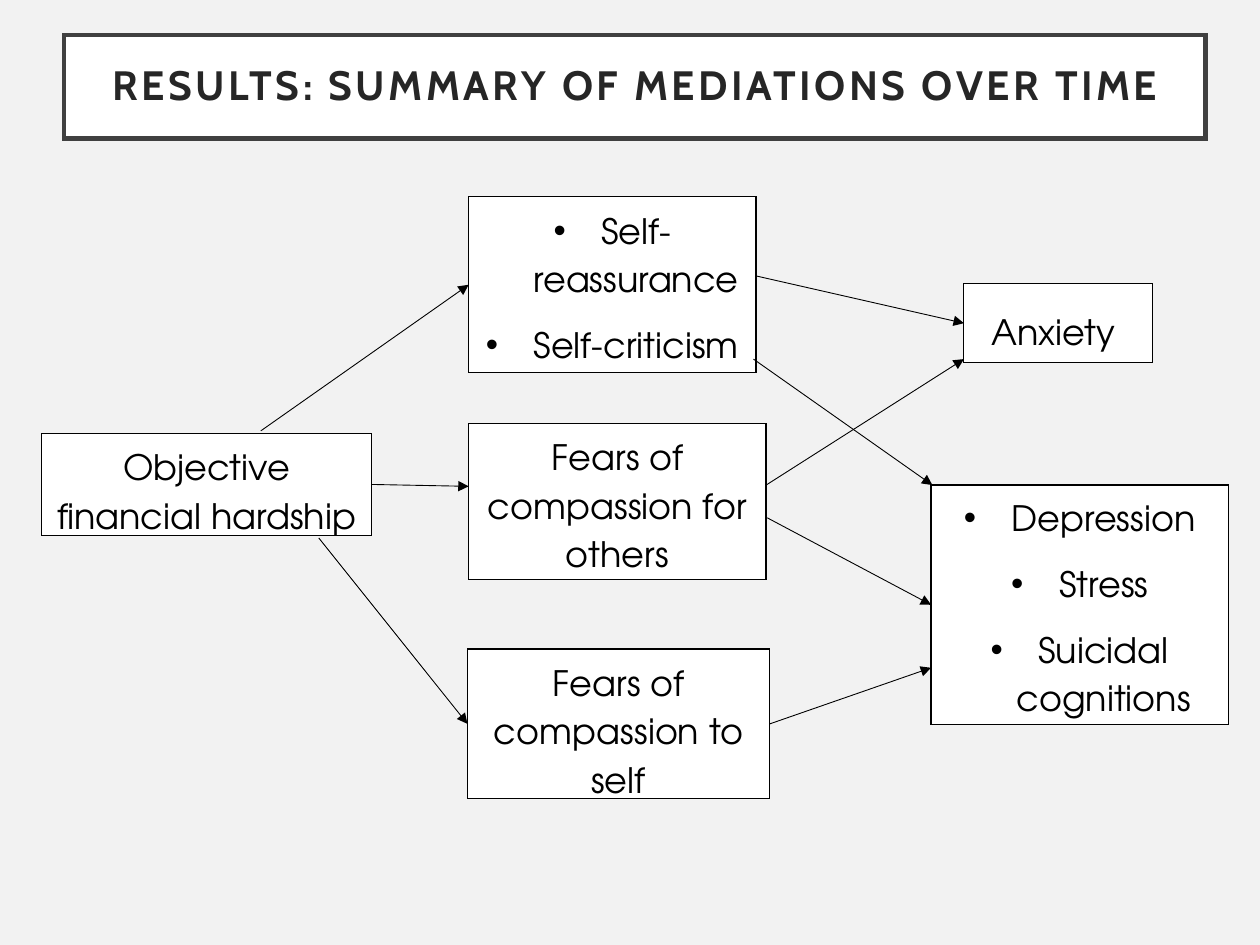
"""Build a slide that summarises the mediation paths over time."""
from dataclasses import dataclass
from typing import Optional

from lxml import etree
from pptx import Presentation
from pptx import util as u
from pptx.dml.color import RGBColor
from pptx.enum import shapes, text
from pptx.oxml import ns

BACKGROUND = RGBColor(0xF2, 0xF2, 0xF2)
WHITE = RGBColor(0xFF, 0xFF, 0xFF)
BLACK = RGBColor(0, 0, 0)
TITLE_BORDER = RGBColor(0x40, 0x40, 0x40)
TITLE_TEXT = RGBColor(0x26, 0x26, 0x26)
LEFT_SIDE, RIGHT_SIDE = 1, 3


@dataclass
class Box:
    name: str
    left: float
    top: float
    width: float
    height: float
    lines: tuple
    bulleted: bool = False
    anchor: text.MSO_ANCHOR = text.MSO_ANCHOR.TOP
    line_spacing: float = 1.15
    space_before: float = 10
    margin_right: float = 0.1
    font: str = "TeX Gyre Adventor"
    size: float = 20
    bold: bool = False
    color: RGBColor = BLACK
    border: RGBColor = BLACK
    border_width: float = 0.75


@dataclass
class Arrow:
    start: tuple
    end: tuple
    source: Optional[str] = None
    target: Optional[str] = None


TITLE = Box("title", 0.51, 0.28, 9.06, 0.82, ("RESULTS: SUMMARY OF MEDIATIONS OVER TIME",),
            anchor=text.MSO_ANCHOR.MIDDLE, line_spacing=0.9, space_before=0, margin_right=0.2,
            font="Cabin", size=23.4, bold=True, color=TITLE_TEXT, border=TITLE_BORDER,
            border_width=2.5)

BOXES = (
    Box("hardship", 0.33, 3.44, 2.62, 0.81, ("Objective financial hardship",)),
    Box("self", 3.72, 1.56, 2.28, 1.4, ("Self-reassurance", "Self-criticism"), bulleted=True),
    Box("fears for others", 3.72, 3.36, 2.36, 1.24, ("Fears of compassion for others",)),
    Box("fears to self", 3.71, 5.15, 2.4, 1.19, ("Fears of compassion to self",)),
    Box("anxiety", 7.65, 2.25, 1.5, 0.63, ("Anxiety",), line_spacing=1.5, margin_right=0.18),
    Box("depression", 7.39, 3.85, 2.36, 1.9, ("Depression", "Stress", "Suicidal cognitions"),
        bulleted=True, anchor=text.MSO_ANCHOR.MIDDLE),
)

ARROWS = (
    Arrow((2.07, 3.42), (3.72, 2.26), target="self"),
    Arrow((2.95, 3.85), (3.72, 3.86), source="hardship"),
    Arrow((2.53, 4.27), (3.71, 5.75), target="fears to self"),
    Arrow((6, 2.19), (7.65, 2.57), target="anxiety"),
    Arrow((5.98, 2.85), (7.4, 3.85)),
    Arrow((6.08, 3.85), (7.65, 2.85)),
    Arrow((6.09, 4.11), (7.39, 4.8), target="depression"),
    Arrow((6.11, 5.75), (7.39, 5.3), source="fears to self"),
)


def add_bullet(paragraph) -> None:
    """Give a paragraph a hanging round bullet."""
    properties = paragraph._p.get_or_add_pPr()
    properties.set("marL", str(u.Inches(0.38)))
    properties.set("indent", str(u.Inches(-0.38)))
    font = etree.SubElement(properties, ns.qn("a:buFont"))
    font.set("typeface", "Arial")
    etree.SubElement(properties, ns.qn("a:buChar")).set("char", "•")


def draw_box(slide, box: Box):
    """Draw a bordered rectangle with its centred text."""
    shape = slide.shapes.add_shape(
        shapes.MSO_SHAPE.RECTANGLE, u.Inches(box.left), u.Inches(box.top),
        u.Inches(box.width), u.Inches(box.height))
    shape.shadow.inherit = False
    shape.fill.solid()
    shape.fill.fore_color.rgb = WHITE
    shape.line.color.rgb = box.border
    shape.line.width = u.Pt(box.border_width)
    corner = etree.SubElement(shape.line._get_or_add_ln(), ns.qn("a:miter"))
    corner.set("lim", "800000")
    frame = shape.text_frame
    frame.word_wrap = True
    frame.vertical_anchor = box.anchor
    frame.margin_right = u.Inches(box.margin_right)
    frame.text = "\n".join(box.lines)
    for paragraph in frame.paragraphs:
        paragraph.alignment = text.PP_ALIGN.CENTER
        paragraph.line_spacing = box.line_spacing
        paragraph.space_before = u.Pt(box.space_before)
        if box.bulleted:
            add_bullet(paragraph)
        for run in paragraph.runs:
            run.font.name = box.font
            run.font.size = u.Pt(box.size)
            run.font.bold = box.bold
            run.font.color.rgb = box.color
    return shape


def draw_title(slide) -> None:
    """Draw the title with wide margins and letter spacing."""
    frame = draw_box(slide, TITLE).text_frame
    frame.margin_left = frame.margin_top = frame.margin_bottom = u.Inches(0.2)
    frame.paragraphs[0].runs[0].font._element.set("spc", "200")


def draw_arrow(slide, arrow: Arrow, drawn: dict) -> None:
    """Draw an arrow and join it to the boxes it meets midway."""
    connector = slide.shapes.add_connector(
        shapes.MSO_CONNECTOR.STRAIGHT,
        *(u.Inches(value) for value in arrow.start + arrow.end))
    if arrow.source:
        connector.begin_connect(drawn[arrow.source], RIGHT_SIDE)
    if arrow.target:
        connector.end_connect(drawn[arrow.target], LEFT_SIDE)
    connector.line.color.rgb = BLACK
    connector.line.width = u.Pt(0.5)
    head = etree.SubElement(connector.line._get_or_add_ln(), ns.qn("a:tailEnd"))
    head.set("type", "triangle")
    etree.SubElement(connector._element.spPr, ns.qn("a:effectLst"))


def main() -> None:
    """Create and save the presentation."""
    presentation = Presentation()
    presentation.slide_width = u.Inches(10)
    presentation.slide_height = u.Inches(7.5)
    slide = presentation.slides.add_slide(presentation.slide_layouts[6])
    slide.background.fill.solid()
    slide.background.fill.fore_color.rgb = BACKGROUND
    draw_title(slide)
    drawn = {box.name: draw_box(slide, box) for box in BOXES}
    for arrow in ARROWS:
        draw_arrow(slide, arrow, drawn)
    presentation.save("out.pptx")


if __name__ == "__main__":
    main()
